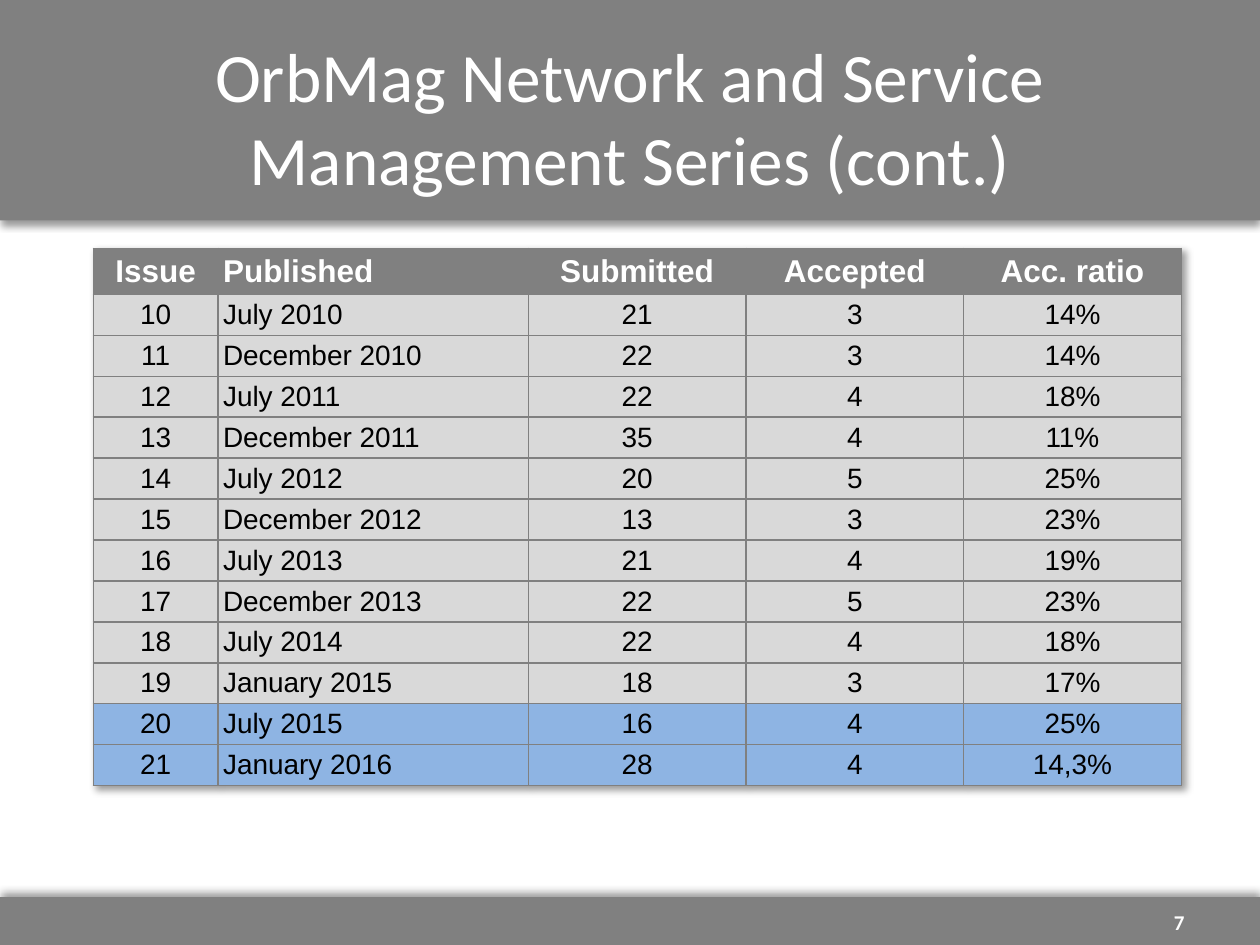
from dataclasses import dataclass

from lxml import etree
from pptx import Presentation
from pptx.dml.color import RGBColor
from pptx.enum.shapes import MSO_SHAPE
from pptx.enum.text import MSO_ANCHOR, MSO_AUTO_SIZE, PP_ALIGN
from pptx.oxml import parse_xml
from pptx.util import Pt

RECTANGLE = MSO_SHAPE.RECTANGLE
MIDDLE = MSO_ANCHOR.MIDDLE
NO_FIT = MSO_AUTO_SIZE.NONE
LEFT, CENTER, RIGHT = PP_ALIGN.LEFT, PP_ALIGN.CENTER, PP_ALIGN.RIGHT
A_NS = "http://schemas.openxmlformats.org/drawingml/2006/main"


@dataclass(frozen=True)
class Theme:
    gray: str = "808080"
    light: str = "D9D9D9"
    highlight: str = "8EB4E3"
    white: str = "FFFFFF"
    black: str = "000000"
    heading_font: str = "Calibri"
    table_font: str = "Arial"
    title_size: float = 39.6
    header_size: float = 18
    body_size: float = 16
    number_size: float = 12


theme = Theme()


def style_text(paragraph, font_name, size, color, align, bold=False):
    paragraph.alignment = align
    font = paragraph.font
    font.name, font.size, font.bold = font_name, Pt(size), bold
    font.color.rgb = RGBColor.from_string(color)


def shadow_effect(degrees):
    return parse_xml(
        f'<a:effectLst xmlns:a="{A_NS}"><a:outerShdw blurRad="{Pt(4)}" dist="{Pt(3)}" '
        f'dir="{degrees * 60000}" algn="tl" rotWithShape="0"><a:srgbClr val="{theme.black}">'
        '<a:alpha val="40000"/></a:srgbClr></a:outerShdw></a:effectLst>'
    )


presentation = Presentation()
presentation.slide_width, presentation.slide_height = Pt(720), Pt(540)
slide = presentation.slides.add_slide(presentation.slide_layouts[5])
shapes = slide.shapes

# Header and footer bands, placed behind the title
for top, height, shadow_direction in ((0, 126, 90), (512.6, 27.4, 270)):
    band = shapes.add_shape(RECTANGLE, 0, Pt(top), Pt(720), Pt(height))
    band.fill.solid()
    band.fill.fore_color.rgb = RGBColor.from_string(theme.gray)
    band.line.fill.background()
    band._element.spPr.append(shadow_effect(shadow_direction))
    shapes._spTree.insert(2, band._element)

title = shapes.title
title.left, title.top, title.width, title.height = Pt(36), Pt(21.6), Pt(648), Pt(90)
title.text_frame.text = "OrbMag Network and Service Management Series (cont.)"
title.text_frame.auto_size = NO_FIT
title.text_frame.vertical_anchor = MIDDLE
style_text(title.text_frame.paragraphs[0], theme.heading_font, theme.title_size,
           theme.white, CENTER)

page_number = shapes.add_textbox(Pt(516), Pt(512.6), Pt(168), Pt(28.8)).text_frame
page_number.text = "7"
page_number.word_wrap = True
page_number.vertical_anchor = MIDDLE
style_text(page_number.paragraphs[0], theme.heading_font, theme.number_size,
           theme.white, RIGHT, bold=True)

# Statistics for each issue of the series
issues = [
    ("Issue", "Published", "Submitted", "Accepted", "Acc. ratio"),
    ("10", "July 2010", "21", "3", "14%"),
    ("11", "December 2010", "22", "3", "14%"),
    ("12", "July 2011", "22", "4", "18%"),
    ("13", "December 2011", "35", "4", "11%"),
    ("14", "July 2012", "20", "5", "25%"),
    ("15", "December 2012", "13", "3", "23%"),
    ("16", "July 2013", "21", "4", "19%"),
    ("17", "December 2013", "22", "5", "23%"),
    ("18", "July 2014", "22", "4", "18%"),
    ("19", "January 2015", "18", "3", "17%"),
    ("20", "July 2015", "16", "4", "25%"),
    ("21", "January 2016", "28", "4", "14,3%"),
]
highlighted_issues = {"20", "21"}
column_widths = (71.3, 177.3, 124.4, 124.4, 124.4)
header_height, row_height = 26.3, 23.4
side_margin, vertical_margin = Pt(2.9), Pt(2)

table = shapes.add_table(
    len(issues), len(column_widths), Pt(53.3), Pt(142), Pt(sum(column_widths)),
    Pt(header_height + row_height * (len(issues) - 1)),
).table
table._tbl.tblPr.insert(0, shadow_effect(45))
table.horz_banding = False
for column, width in zip(table.columns, column_widths):
    column.width = Pt(width)

for row_index, issue in enumerate(issues):
    is_header = row_index == 0
    table.rows[row_index].height = Pt(header_height if is_header else row_height)
    if is_header:
        row_fill, text_color, text_size = theme.gray, theme.white, theme.header_size
    else:
        row_fill = theme.highlight if issue[0] in highlighted_issues else theme.light
        text_color, text_size = theme.black, theme.body_size

    for column_index, value in enumerate(issue):
        cell = table.cell(row_index, column_index)
        cell.text = value
        cell.vertical_anchor = MIDDLE
        cell.margin_left = cell.margin_right = side_margin
        cell.margin_top = cell.margin_bottom = vertical_margin
        cell.fill.solid()
        cell.fill.fore_color.rgb = RGBColor.from_string(row_fill)
        style_text(cell.text_frame.paragraphs[0], theme.table_font, text_size, text_color,
                   LEFT if column_index == 1 else CENTER, bold=is_header)

        cell_properties = cell._tc.get_or_add_tcPr()
        for position, side in enumerate(("lnL", "lnR", "lnT", "lnB")):
            border = etree.Element(f"{{{A_NS}}}{side}", w=str(Pt(1)))
            border_fill = etree.SubElement(border, f"{{{A_NS}}}solidFill")
            etree.SubElement(border_fill, f"{{{A_NS}}}srgbClr", val=theme.gray)
            cell_properties.insert(position, border)

presentation.save("out.pptx")
